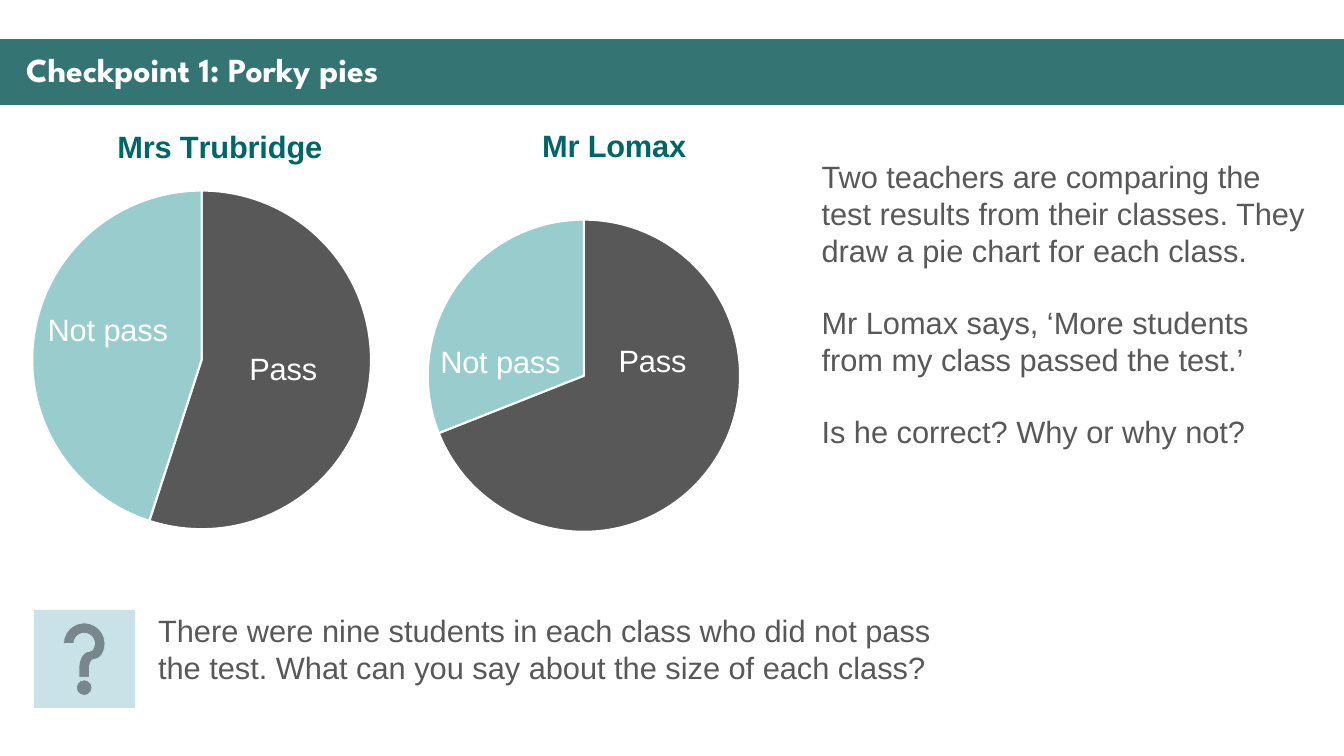
import pptx
import pptx.chart.data
import pptx.dml.color
import pptx.enum.chart
import pptx.enum.shapes
import pptx.enum.text
import pptx.oxml
import pptx.oxml.ns
import pptx.util
from dataclasses import dataclass

Inches, Pt = pptx.util.Inches, pptx.util.Pt


@dataclass(frozen=True)
class Theme:
    banner: str = "347574"
    heading: str = "006666"
    ink: str = "585858"
    fail: str = "99CCCC"
    icon: str = "C8E2E8"
    white: str = "FFFFFF"
    body_font: str = "Arial"
    title_font: str = "League Spartan"
    title_size: int = 24
    body_size: int = 22
    paragraph_gap: int = 25


THEME = Theme()
WIDTH, HEIGHT = 13.33, 7.5

TITLE = "Checkpoint 1: Porky pies"
STORY = [
    "Two teachers are comparing the test results from their classes. "
    "They draw a pie chart for each class.",
    "Mr Lomax says, ‘More students from my class passed the test.’",
    "Is he correct? Why or why not?",
]
QUESTION = [
    "There were nine students in each class who did not pass the test. "
    "What can you say about the size of each class?"
]
CATEGORIES = ["Pass", "Not Pass"]
FAIL_LABEL = "Not pass"

# Frames, centres and title corners are in inches on the slide;
# nudges move each label from the middle of its slice.
PIES = [
    dict(teacher="Mrs Trubridge", values=(55, 45), frame=(-0.51, 0.75, 5.06, 4.98),
         centre=(2.0, 3.57), radius=1.68, corner=(1.11, 1.21),
         nudges=((-0.02, -0.03), (-0.1, -0.16))),
    dict(teacher="Mr Lomax", values=(69, 31), frame=(3.57, 0.76, 4.48, 4.98),
         centre=(5.79, 3.73), radius=1.55, corner=(5.32, 1.2),
         nudges=((0.04, -0.57), (-0.19, 0.31))),
]


def rgb(code):
    return pptx.dml.color.RGBColor.from_string(code)


def style_font(font, size=THEME.body_size, color=THEME.ink, name=THEME.body_font, bold=False):
    font.size, font.name, font.bold = Pt(size), name, bold
    font.color.rgb = rgb(color)


def add_text(page, paragraphs, at, gap=0, line_spacing=None, anchor="TOP", **style):
    box = page.shapes.add_textbox(*map(Inches, at))
    frame = box.text_frame
    frame.word_wrap = True
    frame.vertical_anchor = pptx.enum.text.MSO_ANCHOR[anchor]
    for index, text in enumerate(paragraphs):
        para = frame.add_paragraph() if index else frame.paragraphs[0]
        para.space_before = Pt(gap if index else 0)
        para.line_spacing = line_spacing
        span = para.add_run()
        span.text = text
        style_font(span.font, **style)


def add_block(page, kind, at, color):
    block = page.shapes.add_shape(kind, *map(Inches, at))
    block.shadow.inherit = False
    block.fill.solid()
    block.fill.fore_color.rgb = rgb(color)
    block.line.color.rgb = rgb(color)
    block.line.width = Pt(0.5)


def place(part, index, **settings):
    """Give a chart part a manual layout as its child number index."""
    for old in part.xpath("c:layout"):
        part.remove(old)
    rows = "".join(f'<c:{key} val="{value}"/>' for key, value in settings.items())
    part.insert(index, pptx.oxml.parse_xml(
        f'<c:layout {pptx.oxml.ns.nsdecls("c")}>'
        f"<c:manualLayout>{rows}</c:manualLayout></c:layout>"))


def add_pie(page, teacher, values, frame, centre, radius, corner, nudges):
    left, top, width, height = frame
    data = pptx.chart.data.CategoryChartData()
    data.categories = CATEGORIES
    data.add_series("Series 1", values)
    chart = page.shapes.add_chart(
        pptx.enum.chart.XL_CHART_TYPE.PIE, *map(Inches, frame), data).chart
    chart.has_legend = False
    style_font(chart.font, size=10)

    chart.has_title = True
    title = chart.chart_title
    title.text_frame.text = teacher
    style_font(title.text_frame.paragraphs[0].runs[0].font, color=THEME.heading, bold=True)

    plot = chart.plots[0]
    plot.vary_by_categories = True
    series = plot.series[0]
    labels = series.data_labels
    labels.show_category_name, labels.show_value = True, False
    style_font(labels.font, color=THEME.white)

    for index, color in enumerate((THEME.ink, THEME.fail)):
        point = series.points[index]
        point.format.fill.solid()
        point.format.fill.fore_color.rgb = rgb(color)
        point.format.line.color.rgb = rgb(THEME.white)
        point.format.line.width = Pt(1.5)
        label = point.data_label
        if index:
            label.text_frame.text = FAIL_LABEL
            style_font(label.text_frame.paragraphs[0].runs[0].font, color=THEME.white)
        else:
            style_font(label.font, color=THEME.white)
        label.position = pptx.enum.chart.XL_LABEL_POSITION.CENTER

    root = chart.element
    for part, (dx, dy) in zip(root.xpath(".//c:dLbl"), nudges):
        part.xpath("c:showVal")[0].set("val", "0")
        part.xpath("c:showCatName")[0].set("val", "1")
        place(part, 1, x=round(dx / width, 3), y=round(dy / height, 3))
    place(root.xpath(".//c:title")[0], 1, xMode="edge", yMode="edge",
          x=round((corner[0] - left) / width, 3), y=round((corner[1] - top) / height, 3))
    place(root.xpath(".//c:plotArea")[0], 0, layoutTarget="inner", xMode="edge", yMode="edge",
          x=round((centre[0] - radius - left) / width, 3),
          y=round((centre[1] - radius - top) / height, 3),
          w=round(2 * radius / width, 3), h=round(2 * radius / height, 3))


def main():
    deck = pptx.Presentation()
    deck.slide_width, deck.slide_height = Inches(WIDTH), Inches(HEIGHT)
    page = deck.slides.add_slide(deck.slide_layouts[6])
    kinds = pptx.enum.shapes.MSO_SHAPE

    add_block(page, kinds.RECTANGLE, (0, 0.39, WIDTH, 0.65), THEME.banner)
    add_text(page, [TITLE], (0.16, 0.48, 13.04, 0.47), line_spacing=0.9, anchor="MIDDLE",
             size=THEME.title_size, color=THEME.white, name=THEME.title_font, bold=True)
    add_block(page, kinds.ACTION_BUTTON_HELP, (0.34, 6.06, 0.99, 0.96), THEME.icon)
    add_text(page, STORY, (8.05, 1.52, 5.06, 3.06), gap=THEME.paragraph_gap)
    add_text(page, QUESTION, (1.47, 6.02, 8.1, 0.84))
    for pie in PIES:
        add_pie(page, **pie)
    deck.save("out.pptx")


if __name__ == "__main__":
    main()
